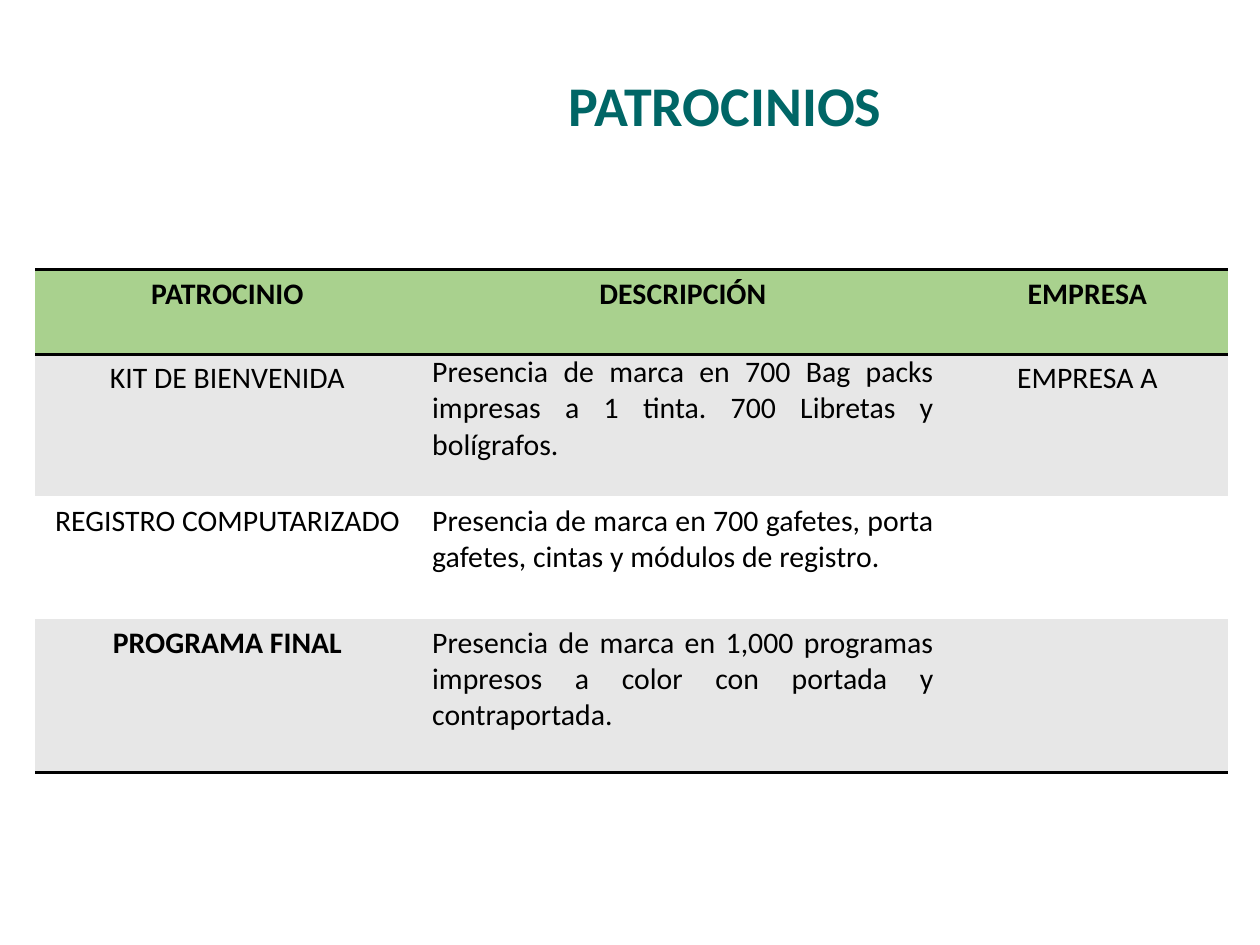
import pptx
import pptx.dml.color
import pptx.enum.text
import pptx.util
from lxml import etree
from pptx.oxml.ns import qn

COLORS = {"title": "006666", "text": "000000", "rule": "000000",
          "header": "A9D18E", "band": "E7E7E7", "plain": "FFFFFF"}
FONT = "Calibri"
Inches, Pt = pptx.util.Inches, pptx.util.Pt
ALIGN = pptx.enum.text.PP_ALIGN


def style(para, size, color, bold, align):
    para.alignment = align
    para.font.name, para.font.size, para.font.bold = FONT, Pt(size), bold
    para.font.color.rgb = pptx.dml.color.RGBColor.from_string(COLORS[color])


def set_borders(cell, ruled_sides):
    """Draw a 2 pt rule on the given sides and clear the others."""
    properties = cell._tc.get_or_add_tcPr()
    for side in "LRTB":
        line = etree.SubElement(properties, qn(f"a:ln{side}"), w=str(Pt(2)))
        if side in ruled_sides:
            fill = etree.SubElement(line, qn("a:solidFill"))
            etree.SubElement(fill, qn("a:srgbClr"), val=COLORS["rule"])
        else:
            etree.SubElement(line, qn("a:noFill"))


deck = pptx.Presentation()
deck.slide_width, deck.slide_height = Inches(10), Inches(7.5)
page = deck.slides.add_slide(deck.slide_layouts[5])

# Title
title = page.shapes.title
title.left, title.top = Inches(2.25), Inches(0.51)
title.width, title.height = Inches(7.01), Inches(0.64)
title.text_frame.text = "PATROCINIOS"
style(title.text_frame.paragraphs[0], 32, "title", True, ALIGN.CENTER)

# Sponsorship table
rows = [
    ("PATROCINIO", "DESCRIPCIÓN", "EMPRESA"),
    ("KIT DE BIENVENIDA",
     "Presencia de marca en 700 Bag packs impresas a 1 tinta. "
     "700 Libretas y bolígrafos.", "EMPRESA A"),
    ("REGISTRO COMPUTARIZADO",
     "Presencia de marca en 700 gafetes, porta gafetes, cintas y "
     "módulos de registro.", ""),
    ("PROGRAMA FINAL",
     "Presencia de marca en 1,000 programas impresos a color con "
     "portada y contraportada.", ""),
]
column_widths = [3.05, 4.18, 2.24]
row_heights = [0.67, 1.13, 0.97, 1.22]
row_fills = ["header", "band", "plain", "band"]
row_rules = ["TB", "T", "", "B"]
bold_cells = {(0, 0), (0, 1), (0, 2), (3, 0)}

table = page.shapes.add_table(
    len(rows), len(column_widths), Inches(0.28), Inches(2.14),
    Inches(sum(column_widths)), Inches(sum(row_heights))).table
table.first_row = table.horz_banding = False
for column, width in zip(table.columns, column_widths):
    column.width = Inches(width)

for r, texts in enumerate(rows):
    table.rows[r].height = Inches(row_heights[r])
    for c, text in enumerate(texts):
        cell = table.cell(r, c)
        set_borders(cell, row_rules[r])
        cell.fill.solid()
        cell.fill.fore_color.rgb = pptx.dml.color.RGBColor.from_string(
            COLORS[row_fills[r]])
        # The first description sits tight against the header rule
        cell.margin_top = cell.margin_bottom = Inches(
            0 if (r, c) == (1, 1) else 0.05)
        cell.text = text
        is_description = r > 0 and c == 1
        style(cell.text_frame.paragraphs[0], 17, "text", (r, c) in bold_cells,
              ALIGN.JUSTIFY if is_description else ALIGN.CENTER)

deck.save("out.pptx")
